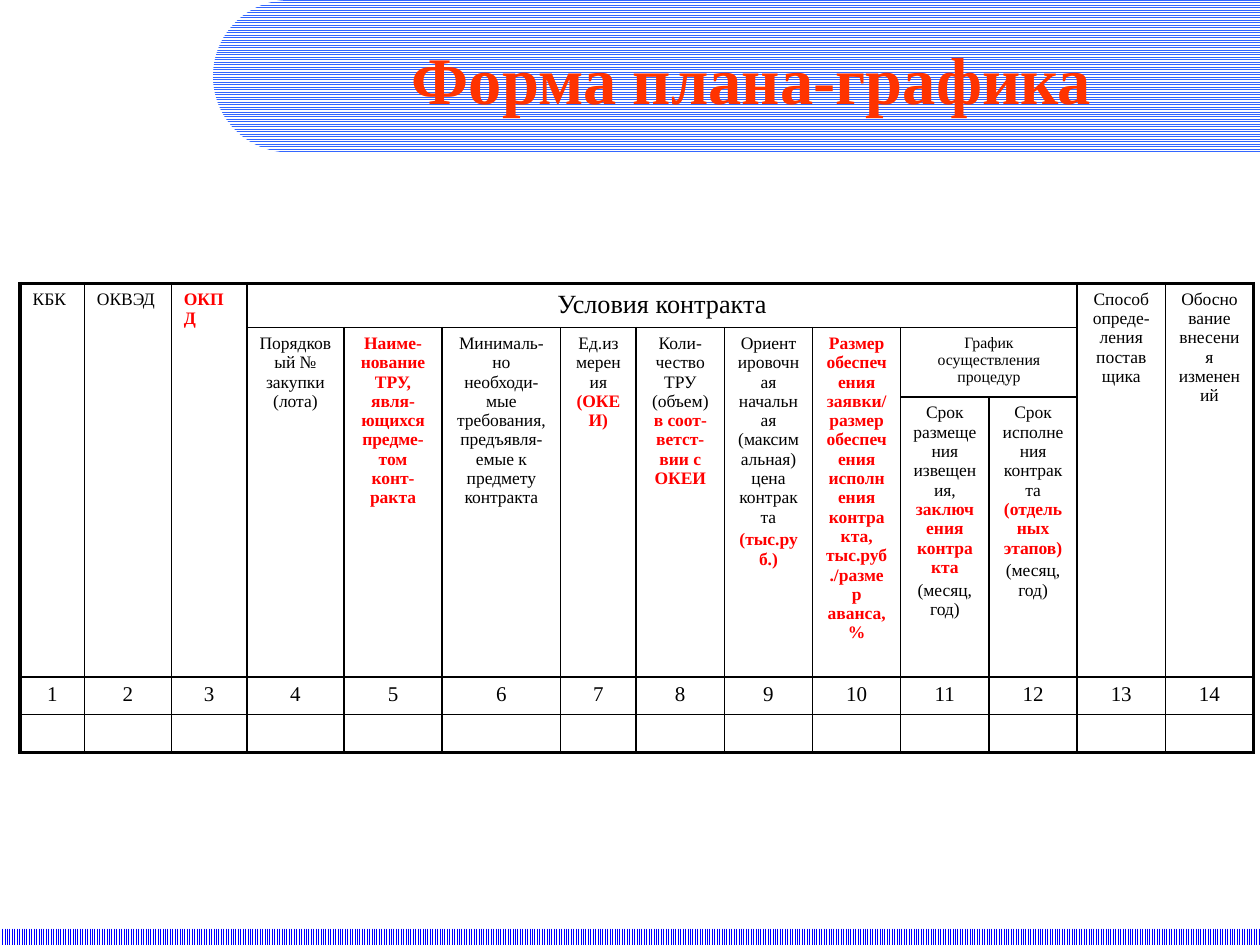
import math
from dataclasses import dataclass

from lxml import etree
from pptx import Presentation
from pptx.dml.color import RGBColor
from pptx.enum.dml import MSO_PATTERN
from pptx.enum.shapes import MSO_SHAPE
from pptx.enum.text import MSO_ANCHOR, PP_ALIGN
from pptx.oxml.ns import qn
from pptx.util import Inches, Pt

HORIZONTAL, VERTICAL = MSO_PATTERN.NARROW_HORIZONTAL, MSO_PATTERN.NARROW_VERTICAL
RECTANGLE = MSO_SHAPE.RECTANGLE
LEFT, CENTER = PP_ALIGN.LEFT, PP_ALIGN.CENTER
MIDDLE = MSO_ANCHOR.MIDDLE


@dataclass(frozen=True)
class Theme:
    font: str = "Times New Roman"
    black: str = "000000"
    white: str = "FFFFFF"
    red: str = "FF0000"
    title: str = "FF3300"
    band: str = "3366FF"
    footer: str = "0000FF"
    title_size: float = 38
    group_size: float = 15
    number_size: int = 12
    body_size: float = 10
    small_size: float = 9
    outer_line: float = 2.25
    inner_line: float = 1


THEME = Theme()


@dataclass(frozen=True)
class Phrase:
    """A stretch of heading text; marked text is bold and red."""
    text: str
    marked: bool = False
    new_paragraph: bool = False


@dataclass(frozen=True)
class Heading:
    row: int
    column: int
    phrases: tuple[Phrase, ...]
    rows: int = 1
    columns: int = 1
    size: float = THEME.body_size
    align: PP_ALIGN = CENTER


MONTH_YEAR = Phrase("(месяц, год)", new_paragraph=True)
COLUMN_WIDTHS = [0.51, 0.69, 0.6, 0.77, 0.78, 0.94, 0.6] + [0.7] * 7
ROW_HEIGHTS = [0.33, 0.55, 2.0, 0.3, 0.3]
NUMBER_ROW = 3

HEADINGS = [
    Heading(0, 0, (Phrase("КБК"),), rows=3, align=LEFT),
    Heading(0, 1, (Phrase("ОКВЭД"),), rows=3, align=LEFT),
    Heading(0, 2, (Phrase("ОКПД", marked=True),), rows=3, align=LEFT),
    Heading(0, 3, (Phrase("Условия контракта"),), columns=9, size=THEME.group_size),
    Heading(0, 12, (Phrase("Способ опреде-ления поставщика"),), rows=3),
    Heading(0, 13, (Phrase("Обоснование внесения изменений"),), rows=3),
    Heading(1, 3, (Phrase("Порядковый № закупки (лота)"),), rows=2),
    Heading(1, 4, (Phrase("Наиме-нование ТРУ, явля-ющихся предме-том конт-ракта",
                          marked=True),), rows=2),
    Heading(1, 5, (Phrase("Минималь-но необходи-мые требования, "
                          "предъявля-емые к предмету контракта"),), rows=2),
    Heading(1, 6, (Phrase("Ед.измерения "), Phrase("(ОКЕИ)", marked=True)), rows=2),
    Heading(1, 7, (Phrase("Коли-чество ТРУ (объем) "),
                   Phrase("в соот-ветст-вии с ОКЕИ", marked=True)), rows=2),
    Heading(1, 8, (Phrase("Ориентировочная начальная (максимальная) цена контракта"),
                   Phrase("(тыс.руб.)", marked=True, new_paragraph=True)), rows=2),
    Heading(1, 9, (Phrase("Размер обеспечения заявки/ размер обеспечения исполнения "
                          "контракта, тыс.руб./размер аванса, %", marked=True),), rows=2),
    Heading(1, 10, (Phrase("График осуществления процедур"),), columns=2,
            size=THEME.small_size),
    Heading(2, 10, (Phrase("Срок размещения извещения, "),
                    Phrase("заключения контракта", marked=True), MONTH_YEAR)),
    Heading(2, 11, (Phrase("Срок исполнения контракта "),
                    Phrase("(отдельных этапов)", marked=True), MONTH_YEAR)),
]


def add_text(para, text: str, *, size: float, color: str = THEME.black,
             bold: bool = False, align: PP_ALIGN = CENTER) -> None:
    para.alignment = align
    span = para.add_run()
    span.text = text
    span.font.name = THEME.font
    span.font.size = Pt(size)
    span.font.bold = bold
    span.font.color.rgb = RGBColor.from_string(color)


def fill_pattern(shape, pattern: MSO_PATTERN, color: str) -> None:
    shape.shadow.inherit = False
    shape.line.fill.background()
    shape.fill.patterned()
    shape.fill.pattern = pattern
    shape.fill.fore_color.rgb = RGBColor.from_string(color)
    shape.fill.back_color.rgb = RGBColor.from_string(THEME.white)


def add_title_band(page) -> None:
    """Band with a half-round left end, running off to the right edge."""
    left, right, height = 1.69, 10, 1.21
    radius, steps = height / 2, 48
    angles = [math.pi * (0.5 + step / steps) for step in range(steps + 1)]
    arc = [(Inches(left + radius + radius * math.cos(angle)),
            Inches(radius - radius * math.sin(angle))) for angle in angles]
    builder = page.shapes.build_freeform(Inches(right), 0)
    builder.add_line_segments(arc + [(Inches(right), Inches(height))], close=True)
    fill_pattern(builder.convert_to_shape(), HORIZONTAL, THEME.band)


def add_title(page, text: str) -> None:
    box = page.shapes.add_textbox(Inches(1.97), Inches(0.24), Inches(7.99), Inches(0.76))
    frame = box.text_frame
    frame.word_wrap = True
    frame.vertical_anchor = MIDDLE
    add_text(frame.paragraphs[0], text, size=THEME.title_size,
             color=THEME.title, bold=True)


def set_borders(cell, row: int, column: int) -> None:
    """Draw thick lines on the table's outer edges and thin ones inside."""
    properties = cell._tc.get_or_add_tcPr()
    edges = {
        "a:lnL": column == 0,
        "a:lnR": column == len(COLUMN_WIDTHS) - 1,
        "a:lnT": row == 0,
        "a:lnB": row == len(ROW_HEIGHTS) - 1,
    }
    for position, (tag, outer) in enumerate(edges.items()):
        width = THEME.outer_line if outer else THEME.inner_line
        line = etree.Element(qn(tag), w=str(Pt(width)))
        solid = etree.SubElement(line, qn("a:solidFill"))
        etree.SubElement(solid, qn("a:srgbClr"), val=THEME.black)
        properties.insert(position, line)


def fill_heading(table, heading: Heading) -> None:
    cell = table.cell(heading.row, heading.column)
    if heading.rows * heading.columns > 1:
        cell.merge(table.cell(heading.row + heading.rows - 1,
                              heading.column + heading.columns - 1))
    para = cell.text_frame.paragraphs[0]
    for phrase in heading.phrases:
        if phrase.new_paragraph:
            para = cell.text_frame.add_paragraph()
            para.space_before = Pt(2)
        add_text(para, phrase.text, size=heading.size, align=heading.align,
                 color=THEME.red if phrase.marked else THEME.black, bold=phrase.marked)


def add_schedule(page) -> None:
    frame = page.shapes.add_table(
        len(ROW_HEIGHTS), len(COLUMN_WIDTHS), Inches(0.16), Inches(2.25),
        Inches(sum(COLUMN_WIDTHS)), Inches(sum(ROW_HEIGHTS)))
    table = frame.table
    table.first_row = table.horz_banding = False
    for column, width in zip(table.columns, COLUMN_WIDTHS):
        column.width = Inches(width)
    for row_index, (row, height) in enumerate(zip(table.rows, ROW_HEIGHTS)):
        row.height = Inches(height)
        for column_index, cell in enumerate(row.cells):
            cell.fill.background()
            set_borders(cell, row_index, column_index)
    for heading in HEADINGS:
        fill_heading(table, heading)
    for column_index in range(len(COLUMN_WIDTHS)):
        number = table.cell(NUMBER_ROW, column_index)
        add_text(number.text_frame.paragraphs[0], str(column_index + 1),
                 size=THEME.number_size)
        empty = table.cell(NUMBER_ROW + 1, column_index).text_frame.paragraphs[0]
        etree.SubElement(empty._p, qn("a:endParaRPr"), sz=str(THEME.number_size * 100))


def main() -> None:
    deck = Presentation()
    deck.slide_width, deck.slide_height = Inches(10), Inches(7.5)
    page = deck.slides.add_slide(deck.slide_layouts[6])
    add_title_band(page)
    footer = page.shapes.add_shape(RECTANGLE, 0, Inches(7.37), Inches(10), Inches(0.13))
    fill_pattern(footer, VERTICAL, THEME.footer)
    add_title(page, "Форма плана-графика")
    add_schedule(page)
    deck.save("out.pptx")


if __name__ == "__main__":
    main()
